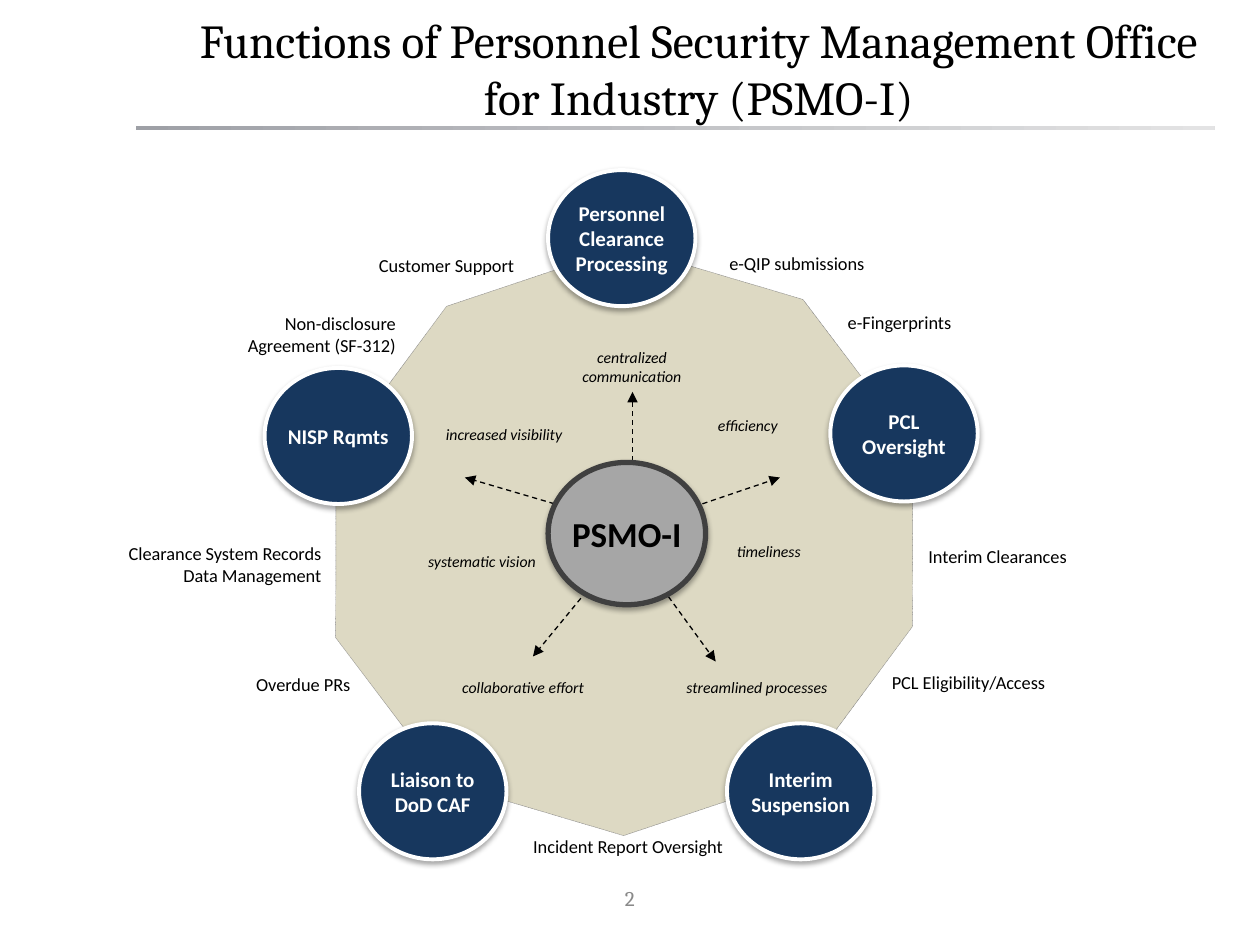
"""Build the slide on the functions of the PSMO-I."""
import pptx
import pptx.dml.color
import pptx.enum.dml
import pptx.enum.shapes
import pptx.enum.text
import pptx.oxml
import pptx.oxml.ns
import pptx.util

Inches = pptx.util.Inches
Pt = pptx.util.Pt
RGBColor = pptx.dml.color.RGBColor
PP_ALIGN = pptx.enum.text.PP_ALIGN
MSO_ANCHOR = pptx.enum.text.MSO_ANCHOR
MSO_SHAPE = pptx.enum.shapes.MSO_SHAPE
MSO_LINE = pptx.enum.dml.MSO_LINE

BLACK = RGBColor(0x00, 0x00, 0x00)
WHITE = RGBColor(0xFF, 0xFF, 0xFF)
NAVY = RGBColor(0x17, 0x37, 0x5E)
SAND = RGBColor(0xDD, 0xD9, 0xC3)
HUB_GRAY = RGBColor(0xA6, 0xA6, 0xA6)
HUB_EDGE = RGBColor(0x40, 0x40, 0x40)
EDGE_GRAY = RGBColor(0x80, 0x80, 0x80)
NUMBER_GRAY = RGBColor(0x89, 0x89, 0x89)
RULE_DARK = RGBColor(0x9E, 0xA0, 0xA6)
RULE_LIGHT = RGBColor(0xE3, 0xE3, 0xE4)

LEFT, CENTER, RIGHT = PP_ALIGN.LEFT, PP_ALIGN.CENTER, PP_ALIGN.RIGHT

FUNCTIONS = [
    ("Liaison to DoD CAF", 2.85, 5.74),
    ("Personnel Clearance\nProcessing", 4.35, 1.35),
    ("PCL\nOversight", 6.59, 2.9),
    ("Interim Suspension", 5.77, 5.74),
    ("NISP Rqmts", 2.1, 2.92),
]
ARROWS = [
    (5.02, 4.16, 5.02, 3.11),
    (5.01, 4.33, 5.68, 5.25),
    (5.02, 4.25, 4.23, 5.21),
    (4.95, 4.16, 3.69, 3.79),
    (5.1, 4.16, 6.19, 3.79),
]
TASKS = [
    ("e-QIP submissions", 5.69, 1.95, 2.5, 0.28, LEFT),
    ("e-Fingerprints", 6.63, 2.42, 1.33, 0.28, LEFT),
    ("Interim Clearances", 7.27, 4.28, 1.33, 0.45, LEFT),
    ("PCL Eligibility/Access", 6.98, 5.28, 1.87, 0.28, LEFT),
    ("Incident Report Oversight", 3.95, 6.58, 2.07, 0.28, CENTER),
    ("Overdue PRs", 1.05, 5.29, 1.83, 0.28, RIGHT),
    ("Clearance System Records Data Management", 0.82, 4.25, 1.83, 0.45, RIGHT),
    ("Non-disclosure Agreement (SF-312)", 1.66, 2.43, 1.58, 0.45, RIGHT),
    ("Customer Support", 2.18, 1.97, 2, 0.28, RIGHT),
]
BENEFITS = [
    ("centralized communication", 4.35, 2.71, 0.4, CENTER),
    ("efficiency", 5.6, 3.25, 0.25, LEFT),
    ("timeliness", 5.75, 4.25, 0.25, LEFT),
    ("streamlined processes", 5.35, 5.33, 0.25, LEFT),
    ("collaborative effort", 3.57, 5.33, 0.25, LEFT),
    ("systematic vision", 3.3, 4.33, 0.25, LEFT),
    ("increased visibility", 3.44, 3.32, 0.25, LEFT),
]


def write(tf, text, size, color=BLACK, align=LEFT, name="Calibri", bold=False, italic=False):
    """Fill a text frame, one paragraph for each line of text."""
    tf.word_wrap = True
    tf.text = text
    for p in tf.paragraphs:
        p.alignment = align
        p.font.name = name
        p.font.size = Pt(size)
        p.font.bold = bold
        p.font.italic = italic
        p.font.color.rgb = color


def add_title(s, text):
    """Place the title in its placeholder."""
    sp = s.shapes.title
    sp.left, sp.top, sp.width, sp.height = map(Inches, (1.42, 0.08, 8.25, 0.92))
    write(sp.text_frame, text, 27, align=CENTER, name="Cambria")
    sp.text_frame.auto_size = pptx.enum.text.MSO_AUTO_SIZE.NONE
    sp.text_frame.vertical_anchor = MSO_ANCHOR.MIDDLE


def add_rule(s):
    """Draw the fading rule under the title."""
    sp = s.shapes.add_shape(MSO_SHAPE.RECTANGLE, *map(Inches, (1.08, 1, 8.56, 0.03)))
    sp.shadow.inherit = False
    sp.line.fill.background()
    sp.fill.gradient()
    sp.fill.gradient_angle = 0
    for stop, color, position in zip(sp.fill.gradient_stops, (RULE_DARK, RULE_LIGHT), (0, 1)):
        stop.color.rgb = color
        stop.position = position


def add_outlined(s, kind, box, fill, edge, weight):
    """Add a filled, outlined preset shape."""
    sp = s.shapes.add_shape(kind, *map(Inches, box))
    sp.shadow.inherit = False
    sp.fill.solid()
    sp.fill.fore_color.rgb = fill
    sp.line.color.rgb = edge
    sp.line.width = Pt(weight)
    return sp


def add_circle(s, text, box, size, fill, edge, weight, color):
    """Add a labelled ellipse with a soft shadow below it."""
    sp = add_outlined(s, MSO_SHAPE.OVAL, box, fill, edge, weight)
    shadow = pptx.oxml.parse_xml(
        f'<a:outerShdw {pptx.oxml.ns.nsdecls("a")} blurRad="{Pt(3.1)}" dist="{Pt(1.8)}" '
        'dir="5400000" rotWithShape="0"><a:srgbClr val="000000">'
        '<a:alpha val="35000"/></a:srgbClr></a:outerShdw>')
    sp._element.spPr.find(pptx.oxml.ns.qn("a:effectLst")).append(shadow)
    tf = sp.text_frame
    tf.margin_left = tf.margin_right = tf.margin_top = tf.margin_bottom = 0
    tf.vertical_anchor = MSO_ANCHOR.MIDDLE
    write(tf, text, size, color, CENTER, bold=True)


def add_arrow(s, ends):
    """Add a dashed arrow."""
    line = s.shapes.add_connector(pptx.enum.shapes.MSO_CONNECTOR.STRAIGHT, *map(Inches, ends))
    line.line.color.rgb = BLACK
    line.line.width = Pt(0.75)
    line.line.dash_style = MSO_LINE.DASH
    ns = pptx.oxml.ns.nsdecls("a")
    line.line._get_or_add_ln().append(pptx.oxml.parse_xml(f'<a:tailEnd {ns} type="triangle"/>'))
    line._element.spPr.append(pptx.oxml.parse_xml(f"<a:effectLst {ns}/>"))


def add_label(s, text, box, size, **style):
    """Add a text box and return its text frame."""
    tf = s.shapes.add_textbox(*map(Inches, box)).text_frame
    write(tf, text, size, **style)
    return tf


def main():
    """Build and save the slide."""
    prs = pptx.Presentation()
    prs.slide_width, prs.slide_height = Inches(10), Inches(7.5)
    s = prs.slides.add_slide(prs.slide_layouts[5])
    add_rule(s)
    add_title(s, "Functions of Personnel Security Management Office for Industry (PSMO-I)")

    decagon = add_outlined(s, MSO_SHAPE.DECAGON, (2.54, 2.08, 4.83, 4.43), SAND, EDGE_GRAY, 0.25)
    decagon.rotation = 341.5
    decagon.line.dash_style = MSO_LINE.ROUND_DOT

    for text, x, y in FUNCTIONS:
        add_circle(s, text, (x, y, 1.17, 1.08), 12, NAVY, WHITE, 2.25, WHITE)
    for ends in ARROWS:
        add_arrow(s, ends)
    for text, *box, align in TASKS:
        add_label(s, text, box, 10.5, align=align)
    for text, x, y, height, align in BENEFITS:
        add_label(s, text, (x, y, 1.33, height), 9, align=align, italic=True)
    add_circle(s, "PSMO-I", (4.35, 3.67, 1.25, 1.13), 20, HUB_GRAY, HUB_EDGE, 3, BLACK)

    number = add_label(s, "2", (0, 6.93, 10, 0.4), 12, color=NUMBER_GRAY, align=CENTER, name="Cambria")
    number.vertical_anchor = MSO_ANCHOR.MIDDLE
    prs.save("out.pptx")


if __name__ == "__main__":
    main()
